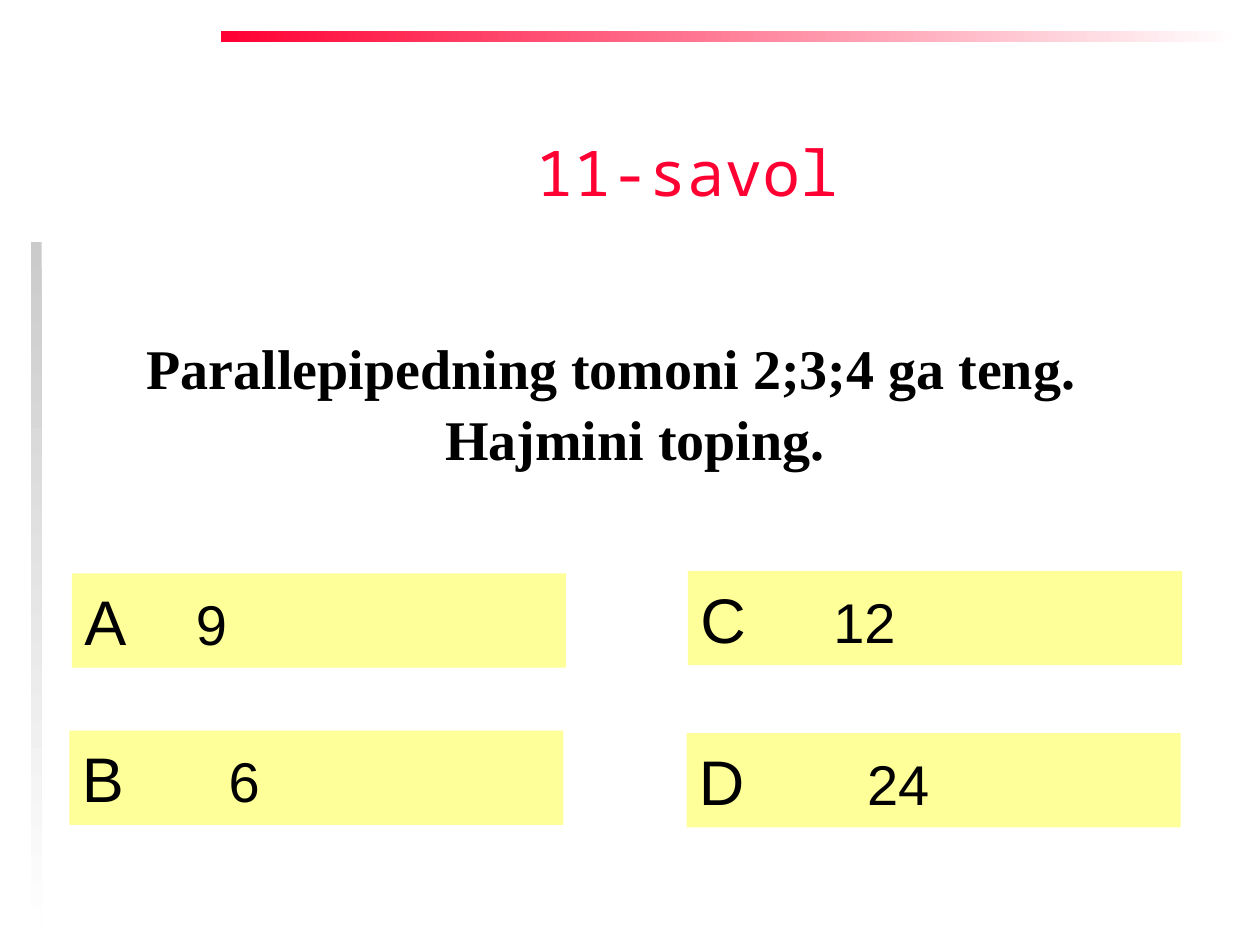
from pptx import Presentation
from pptx.dml.color import RGBColor
from pptx.enum.shapes import MSO_SHAPE
from pptx.enum.text import MSO_ANCHOR, PP_ALIGN
from pptx.oxml.ns import qn
from pptx.util import Cm, Pt
from lxml.etree import SubElement

RED, BLACK, YELLOW = "FF0033", "000000", "FFFF99"


def color(hex_str):
    return RGBColor.from_string(hex_str)


def add_run(p, text, size, font, hex_str=BLACK, bold=False):
    r = p.add_run()
    r.text = text
    r.font.size = Pt(size)
    r.font.name = font
    r.font.bold = bold
    r.font.color.rgb = color(hex_str)


def add_rect(slide, box):
    s = slide.shapes.add_shape(MSO_SHAPE.RECTANGLE, *map(Cm, box))
    s.shadow.inherit = False
    s.line.fill.background()
    return s


def add_fading_bar(slide, box, hex_str, angle):
    s = add_rect(slide, box)
    s.fill.gradient()
    s.fill.gradient_angle = angle
    for stop, position, c in zip(s.fill.gradient_stops, (0, 1), (hex_str, "FFFFFF")):
        stop.position = position
        stop.color.rgb = color(c)


def add_title(slide, box, text):
    s = slide.shapes.title
    s.left, s.top, s.width, s.height = map(Cm, box)
    tf = s.text_frame
    tf.word_wrap = False
    tf.vertical_anchor = MSO_ANCHOR.TOP
    p = tf.paragraphs[0]
    p.alignment = PP_ALIGN.CENTER
    add_run(p, text, 36, "Noto Sans Mono", RED)


def add_question(slide, box, text):
    tf = slide.shapes.add_textbox(*map(Cm, box)).text_frame
    tf.word_wrap = True
    tf.margin_top = Cm(0.23)
    p = tf.paragraphs[0]
    p.alignment = PP_ALIGN.CENTER
    p.line_spacing = 1.05
    # Hanging indent
    pPr = p._p.get_or_add_pPr()
    pPr.set("marL", str(Cm(0.95)))
    pPr.set("indent", str(Cm(-0.95)))
    add_run(p, text, 32, "Times New Roman", bold=True)


def add_answer(slide, box, letter, value, tab):
    s = add_rect(slide, box)
    s.fill.solid()
    s.fill.fore_color.rgb = color(YELLOW)
    tf = s.text_frame
    tf.word_wrap = True
    tf.vertical_anchor = MSO_ANCHOR.MIDDLE
    p = tf.paragraphs[0]
    p.alignment = PP_ALIGN.LEFT
    # Tab stop between the letter and its value
    tabs = SubElement(p._p.get_or_add_pPr(), qn("a:tabLst"))
    SubElement(tabs, qn("a:tab"), pos=str(Cm(tab)), algn="l")
    add_run(p, letter + "\t", 36, "Arial")
    add_run(p, value, 32, "Arial")


def main():
    prs = Presentation()
    prs.slide_width, prs.slide_height = Cm(25.4), Cm(19.05)
    slide = prs.slides.add_slide(prs.slide_layouts[5])

    # Decorative bars
    add_fading_bar(slide, (4.45, 0.63, 20.52, 0.21), RED, 0)
    add_fading_bar(slide, (0.63, 4.87, 0.21, 13.97), "CBCBCB", 270)

    # Title and question
    add_title(slide, (10.16, 2.57, 7.37, 2.24), "11-savol")
    add_question(slide, (2.13, 6.43, 20.4, 3.99),
                 "Parallepipedning tomoni 2;3;4 ga teng. Hajmini toping.")

    # Answers: left, top, letter, value, tab
    answers = [
        (1.45, 11.56, "А", "9", 2.25),
        (1.4, 14.73, "B", "6", 2.96),
        (13.87, 11.51, "C", "12", 2.68),
        (13.84, 14.78, "D", "24", 3.39),
    ]
    for left, top, letter, value, tab in answers:
        add_answer(slide, (left, top, 9.96, 1.9), letter, value, tab)

    prs.save("out.pptx")


if __name__ == "__main__":
    main()
